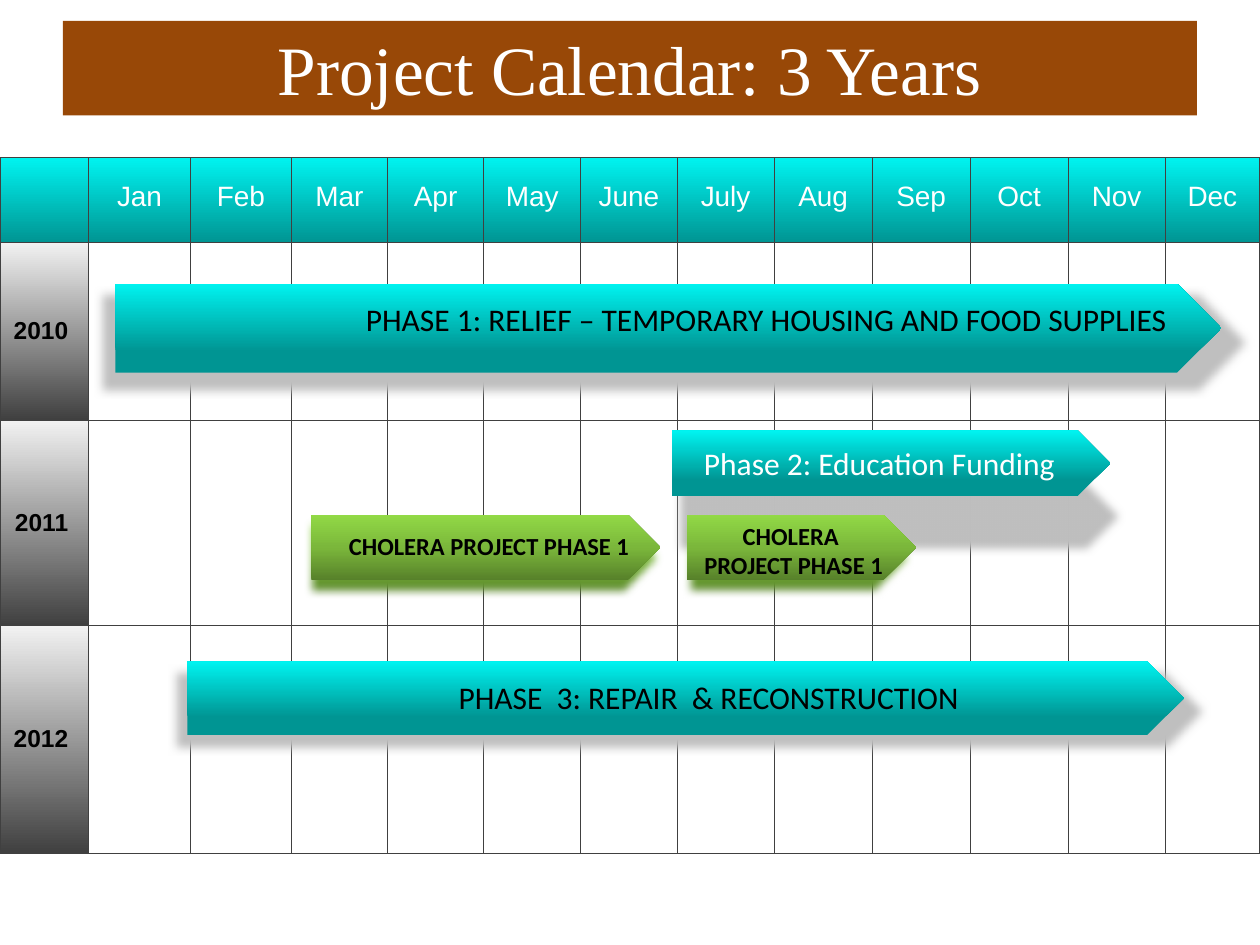
"""Build a three-year project calendar with phase arrows over a month table."""
import copy

import pptx
import pptx.chart.data
import pptx.dml.color
import pptx.enum.shapes
import pptx.enum.text
import pptx.oxml
import pptx.oxml.ns
import pptx.util

Pt = pptx.util.Pt
qn = pptx.oxml.ns.qn
SHAPE = pptx.enum.shapes.MSO_SHAPE
ALIGN = pptx.enum.text.PP_ALIGN
MIDDLE = pptx.enum.text.MSO_ANCHOR.MIDDLE

TITLE = "Project Calendar: 3 Years"
TITLE_BOX = (36, 12, 648, 54)
MONTHS = ["Jan", "Feb", "Mar", "Apr", "May", "June",
          "July", "Aug", "Sep", "Oct", "Nov", "Dec"]
YEARS = ["2010", "2011", "2012"]
TABLE_TOP = 90
COLUMNS = [50.5, 58.5, 57.5, 55, 55, 55.5, 55, 55.5, 56, 56, 56, 55.5, 54]
ROWS = [48.5, 101.5, 117.5, 130]

THEME = {
    "title_fill": "984807", "cell_fill": "FFFFFF", "border": "404040",
    "shadow": "BFBFBF", "soft_edge": 5, "border_width": 0.5,
    "month_fill": [(0, "009593"), (100, "00F3F0")],
    "year_fill": [(0, "404040"), (100, "F2F2F2")],
    "teal": [(24, "009593"), (100, "00F3F0")],
    "green": [(0, "57812A"), (50, "7BB73B"), (100, "92DA46")],
    "title": {"name": "Times New Roman", "size": 39.6, "color": "FFFFFF"},
    "month": {"name": "Arial", "size": 16, "color": "FFFFFF"},
    "year": {"name": "Arial", "size": 14, "color": "000000", "bold": True},
    "phase": {"name": "Calibri", "size": 18, "color": "000000"},
    "phase_light": {"name": "Calibri", "size": 18, "color": "FFFFFF"},
    "project": {"name": "Calibri", "size": 14, "color": "000000", "bold": True},
}

ARROWS = [
    {"lines": ["CHOLERA PROJECT PHASE 1"], "font": "project", "fill": "green",
     "shadow": (174, 296, 210, 46), "bar": (178, 294, 199.5, 37.5),
     "label": (174, 300, 211, 24.5)},
    {"lines": ["PHASE 1: RELIEF – TEMPORARY HOUSING AND FOOD SUPPLIES"],
     "font": "phase", "fill": "teal",
     "shadow": (54, 164, 666, 63.5), "bar": (66, 162, 632, 51),
     "label": (168, 168, 540, 29)},
    {"lines": ["PHASE  3: REPAIR  & RECONSTRUCTION"], "font": "phase", "fill": "teal",
     "shadow": (96, 380, 600, 52), "bar": (107, 378, 569.5, 42),
     "label": (252, 384, 306, 29)},
    {"lines": ["Phase 2: Education Funding "], "font": "phase_light", "fill": "teal",
     "shadow": (384, 272, 264, 46), "bar": (384, 246, 250.5, 37.5), "label": None},
    {"lines": ["CHOLERA ", "PROJECT PHASE 1"], "font": "project", "fill": "green",
     "shadow": (390, 296, 138, 46), "bar": (392.5, 294, 131, 37.5),
     "label": (348, 294, 211, 41)},
]


def rgb(value):
    return pptx.dml.color.RGBColor.from_string(value)


def paint(target, element, fill):
    if isinstance(fill, str):
        target.fill.solid()
        target.fill.fore_color.rgb = rgb(fill)
        return
    target.fill.gradient()
    target.fill.gradient_angle = 90
    stop_list = next(element.iter(qn("a:gsLst")))
    while len(stop_list) < len(fill):
        stop_list.append(copy.deepcopy(stop_list[0]))
    for stop, (position, color) in zip(target.fill.gradient_stops, fill):
        stop.position = position / 100
        stop.color.rgb = rgb(color)


def write(frame, lines, style, align=ALIGN.CENTER):
    frame.word_wrap = True
    for index, line in enumerate(lines):
        para = frame.add_paragraph() if index else frame.paragraphs[0]
        para.alignment = align
        span = para.add_run()
        span.text = line
        for key, value in THEME[style].items():
            if key == "color":
                span.font.color.rgb = rgb(value)
            else:
                setattr(span.font, key, Pt(value) if key == "size" else value)


def add_shape(shapes, kind, bounds, fill):
    shape = shapes.add_shape(kind, *map(Pt, bounds))
    shape.shadow.inherit = False
    paint(shape, shape._element, fill)
    shape.line.fill.background()
    return shape


def soften(shape):
    effects = next(shape._element.iter(qn("a:effectLst")))
    edge = pptx.oxml.parse_xml(
        '<a:softEdge xmlns:a="http://schemas.openxmlformats.org/drawingml/2006/main"'
        f' rad="{Pt(THEME["soft_edge"])}"/>')
    effects.append(edge)


def add_borders(cell):
    properties = cell._tc.get_or_add_tcPr()
    for index, side in enumerate("LRTB"):
        properties.insert(index, pptx.oxml.parse_xml(
            f'<a:ln{side} xmlns:a="http://schemas.openxmlformats.org/drawingml/2006/main"'
            f' w="{Pt(THEME["border_width"])}"><a:solidFill>'
            f'<a:srgbClr val="{THEME["border"]}"/></a:solidFill></a:ln{side}>'))


def add_calendar(page):
    table = page.shapes.add_table(
        len(ROWS), len(COLUMNS), 0, Pt(TABLE_TOP), Pt(sum(COLUMNS)), Pt(sum(ROWS))).table
    for column, width in zip(table.columns, COLUMNS):
        column.width = Pt(width)
    for row, height in zip(table.rows, ROWS):
        row.height = Pt(height)
    month_format = {"vertical_anchor": MIDDLE, "margin_left": Pt(3), "margin_top": 0,
                    "margin_right": Pt(3), "margin_bottom": Pt(3)}
    year_format = {"vertical_anchor": MIDDLE, "margin_left": Pt(4.5), "margin_top": 0,
                   "margin_right": Pt(11.5), "margin_bottom": 0}
    for row in range(len(ROWS)):
        for column in range(len(COLUMNS)):
            cell = table.cell(row, column)
            fill = "month_fill" if row == 0 else "cell_fill" if column else "year_fill"
            paint(cell, cell._tc, THEME[fill])
            add_borders(cell)
            if (row == 0) == (column == 0):
                continue
            cell_format = year_format if row else month_format
            for key, value in cell_format.items():
                setattr(cell, key, value)
            if row:
                write(cell.text_frame, [YEARS[row - 1]], "year", ALIGN.RIGHT)
            else:
                write(cell.text_frame, [MONTHS[column - 1]], "month")


def add_arrow(page, arrow):
    group = page.shapes.add_group_shape()
    fill = THEME[arrow["fill"]]
    shadow_fill = THEME["shadow"] if arrow["fill"] == "teal" else fill
    soften(add_shape(group.shapes, SHAPE.PENTAGON, arrow["shadow"], shadow_fill))
    box = add_shape(group.shapes, SHAPE.PENTAGON, arrow["bar"], fill)
    if arrow["label"]:
        box = page.shapes.add_textbox(*map(Pt, arrow["label"]))
    else:
        box.text_frame.vertical_anchor = MIDDLE
    write(box.text_frame, arrow["lines"], arrow["font"])


def main():
    deck = pptx.Presentation()
    deck.slide_width, deck.slide_height = Pt(720), Pt(540)
    page = deck.slides.add_slide(deck.slide_layouts[6])
    add_calendar(page)
    banner = add_shape(page.shapes, SHAPE.RECTANGLE, TITLE_BOX, THEME["title_fill"])
    banner.text_frame.vertical_anchor = MIDDLE
    write(banner.text_frame, [TITLE], "title")
    for arrow in ARROWS:
        add_arrow(page, arrow)
    deck.save("out.pptx")


if __name__ == "__main__":
    main()
